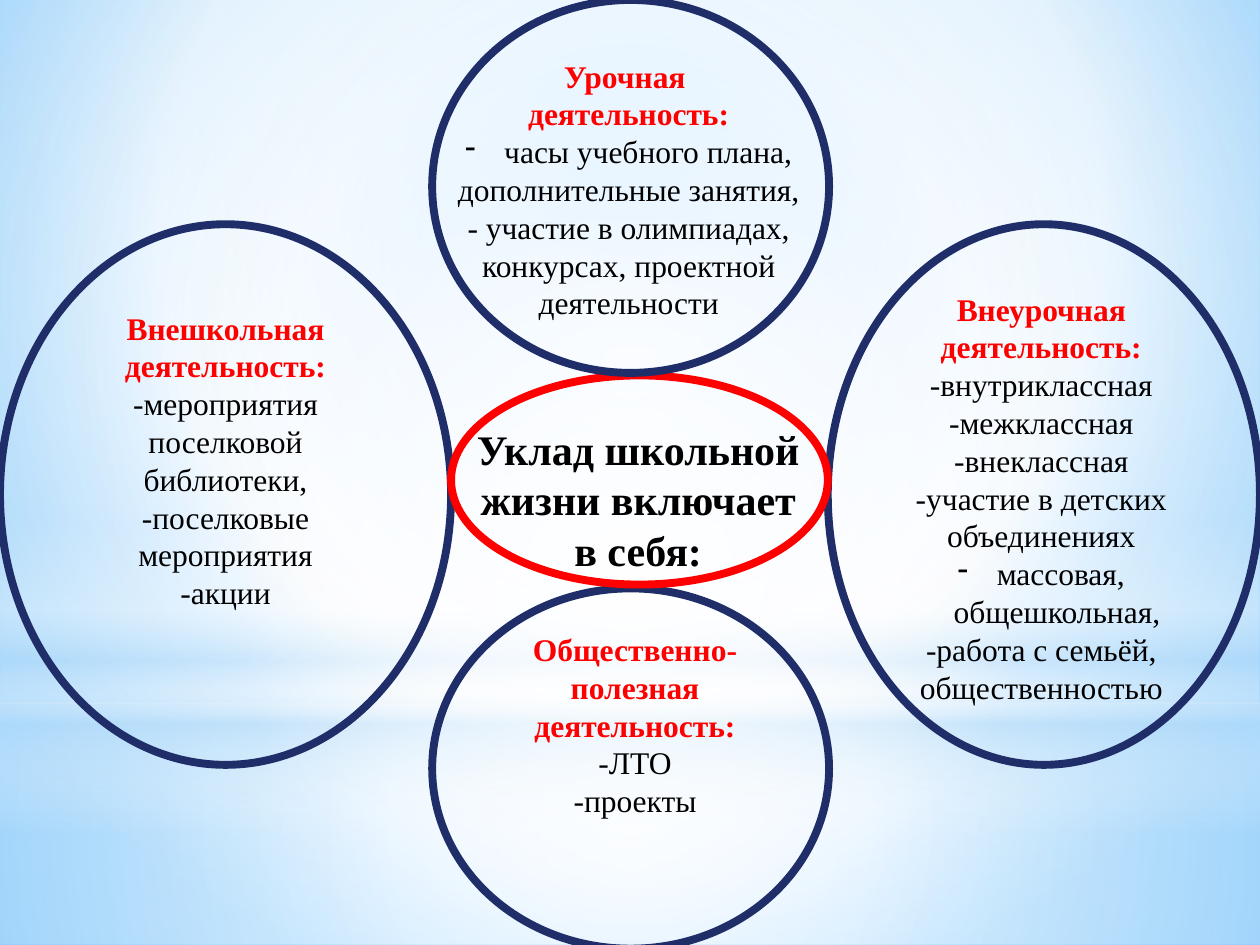
import pptx
import pptx.util
import pptx.dml.color
import pptx.enum.shapes
import pptx.enum.text
import pptx.oxml
import pptx.oxml.ns
from lxml import etree

Inches, Pt = pptx.util.Inches, pptx.util.Pt
RGB = pptx.dml.color.RGBColor.from_string
SHAPE = pptx.enum.shapes.MSO_SHAPE
TEXT = pptx.enum.text
qn = pptx.oxml.ns.qn

THEME = {
    "font": "Times New Roman",
    "title_size": 24, "body_size": 18, "outline": 4.5,
    "accent": "FF0000", "ring": "1F2E69", "text": "000000",
    "white": "FFFFFF", "pale": "B4DCFA", "sky": "9ED5FF", "blue": "5BB9FF",
}
BULLET_INDENT = 0.31

TITLE = "Уклад школьной жизни включает в себя:"
TITLE_BOX = (3.65, 3.31, 2.83, 1.31)

# Each activity: text box, headings, items; an item in a tuple has a real bullet
ACTIVITIES = [
    {"box": (3.43, 0.4, 3.12, 2.22),
     "headings": ["Урочная ", "деятельность:"],
     "items": [("часы учебного плана,",), "дополнительные занятия,",
               "- участие в олимпиадах, конкурсах, проектной деятельности"]},
    {"box": (6.81, 2.25, 2.91, 3.43),
     "headings": ["Внеурочная деятельность:"],
     "items": ["-внутриклассная", "-межклассная", "-внеклассная",
               "-участие в детских объединениях",
               ("массовая, общешкольная, ",),
               "-работа с семьёй, общественностью"]},
    {"box": (0.53, 2.4, 2.52, 2.83),
     "headings": ["Внешкольная деятельность:"],
     "items": ["-мероприятия поселковой библиотеки,",
               "-поселковые мероприятия", "-акции"]},
    {"box": (3.9, 4.95, 2.28, 1.92),
     "headings": ["Общественно-полезная деятельность:"],
     "items": ["-ЛТО", "-проекты"]},
]

RINGS = [
    ((3.43, 4.67, 3.15, 2.86), "ring"),
    ((0, 1.78, 3.58, 4.29), "ring"),
    ((6.57, 1.78, 3.43, 4.29), "ring"),
    ((3.58, 2.98, 2.99, 1.66), "accent"),
    ((3.43, 0, 3.15, 2.96), "ring"),
]

# Gradient stops: position %, colour, opacity %
CENTRE = (50, 50, 50, 50)
BACKGROUND = [(0, "sky", 100), (60, "white", 100), (100, "blue", 100)]
BACKGROUND_FOCUS = (20, 10, 20, 60)
GLOWS = [
    (SHAPE.RECTANGLE, (0, 5.58, 10, 1.92), CENTRE,
     [(0, "white", 91), (37, "white", 76), (100, "pale", 79)]),
    (SHAPE.RECTANGLE, (0, 0, 10, 5.58), CENTRE,
     [(0, "white", 89), (48, "white", 62), (100, "pale", 79)]),
    (SHAPE.RECTANGLE, (0, 4.12, 10, 2.5), None,
     [(0, "white", 0), (29, "white", 30), (45, "pale", 40),
      (55, "white", 26), (65, "pale", 60), (100, "white", 0)]),
    (SHAPE.OVAL, (0, 1.75, 10, 5.58), CENTRE,
     [(0, "white", 100), (56, "white", 0)]),
]


def inches(box):
    return [Inches(value) for value in box]


def set_gradient(properties, stops, focus):
    """Replace a solid fill by a circular gradient, or a vertical one without focus."""
    gradient = etree.Element(qn("a:gradFill"), rotWithShape="1")
    stop_list = etree.SubElement(gradient, qn("a:gsLst"))
    for position, colour, opacity in stops:
        stop = etree.SubElement(stop_list, qn("a:gs"), pos=str(position * 1000))
        tint = etree.SubElement(stop, qn("a:srgbClr"), val=THEME[colour])
        if opacity < 100:
            etree.SubElement(tint, qn("a:alpha"), val=str(opacity * 1000))
    if focus:
        circle = etree.SubElement(gradient, qn("a:path"), path="circle")
        sides = {side: str(value * 1000) for side, value in zip("ltrb", focus)}
        etree.SubElement(circle, qn("a:fillToRect"), **sides)
    else:
        etree.SubElement(gradient, qn("a:lin"), ang="5400000", scaled="0")
    properties.replace(properties.find(qn("a:solidFill")), gradient)


def add_glow(slide, kind, box, focus, stops):
    glow = slide.shapes.add_shape(kind, *inches(box))
    glow.shadow.inherit = False
    glow.line.fill.background()
    glow.fill.solid()
    set_gradient(glow.element.spPr, stops, focus)


def add_ring(slide, box, colour):
    ring = slide.shapes.add_shape(SHAPE.OVAL, *inches(box))
    ring.shadow.inherit = False
    ring.fill.background()
    ring.line.color.rgb = RGB(THEME[colour])
    ring.line.width = Pt(THEME["outline"])


def add_bullet(paragraph):
    properties = paragraph._p.get_or_add_pPr()
    properties.set("marL", str(Inches(BULLET_INDENT)))
    properties.set("indent", str(-Inches(BULLET_INDENT)))
    etree.SubElement(properties, qn("a:buFontTx"))
    etree.SubElement(properties, qn("a:buChar"), char="-")


def style(paragraph, size, colour, bold):
    paragraph.alignment = TEXT.PP_ALIGN.CENTER
    font = paragraph.font
    font.name = THEME["font"]
    font.size = Pt(THEME[size])
    font.bold = bold
    font.color.rgb = RGB(THEME[colour])


def place_title(slide):
    title = slide.shapes.title
    title.left, title.top, title.width, title.height = inches(TITLE_BOX)
    frame = title.text_frame
    frame.text = TITLE
    frame.word_wrap = True
    frame.auto_size = TEXT.MSO_AUTO_SIZE.SHAPE_TO_FIT_TEXT
    frame.vertical_anchor = TEXT.MSO_ANCHOR.TOP
    style(frame.paragraphs[0], "title_size", "text", True)
    title.element.getparent().append(title.element)  # in front of the glows


def add_activity(slide, box, headings, items):
    frame = slide.shapes.add_textbox(*inches(box)).text_frame
    frame.word_wrap = True
    frame.auto_size = TEXT.MSO_AUTO_SIZE.SHAPE_TO_FIT_TEXT
    for index, line in enumerate(headings + items):
        paragraph = frame.add_paragraph() if index else frame.paragraphs[0]
        bulleted = isinstance(line, tuple)
        paragraph.text = line[0] if bulleted else line
        if bulleted:
            add_bullet(paragraph)
        heading = index < len(headings)
        style(paragraph, "body_size", "accent" if heading else "text", heading)


def main():
    deck = pptx.Presentation()
    deck.slide_width, deck.slide_height = Inches(10), Inches(7.5)
    slide = deck.slides.add_slide(deck.slide_layouts.get_by_name("Title Only"))
    slide.background.fill.solid()
    set_gradient(next(slide.element.iter(qn("p:bgPr"))), BACKGROUND, BACKGROUND_FOCUS)
    for glow in GLOWS:
        add_glow(slide, *glow)
    for ring in RINGS:
        add_ring(slide, *ring)
    place_title(slide)
    for activity in ACTIVITIES:
        add_activity(slide, **activity)
    deck.save("out.pptx")


if __name__ == "__main__":
    main()
